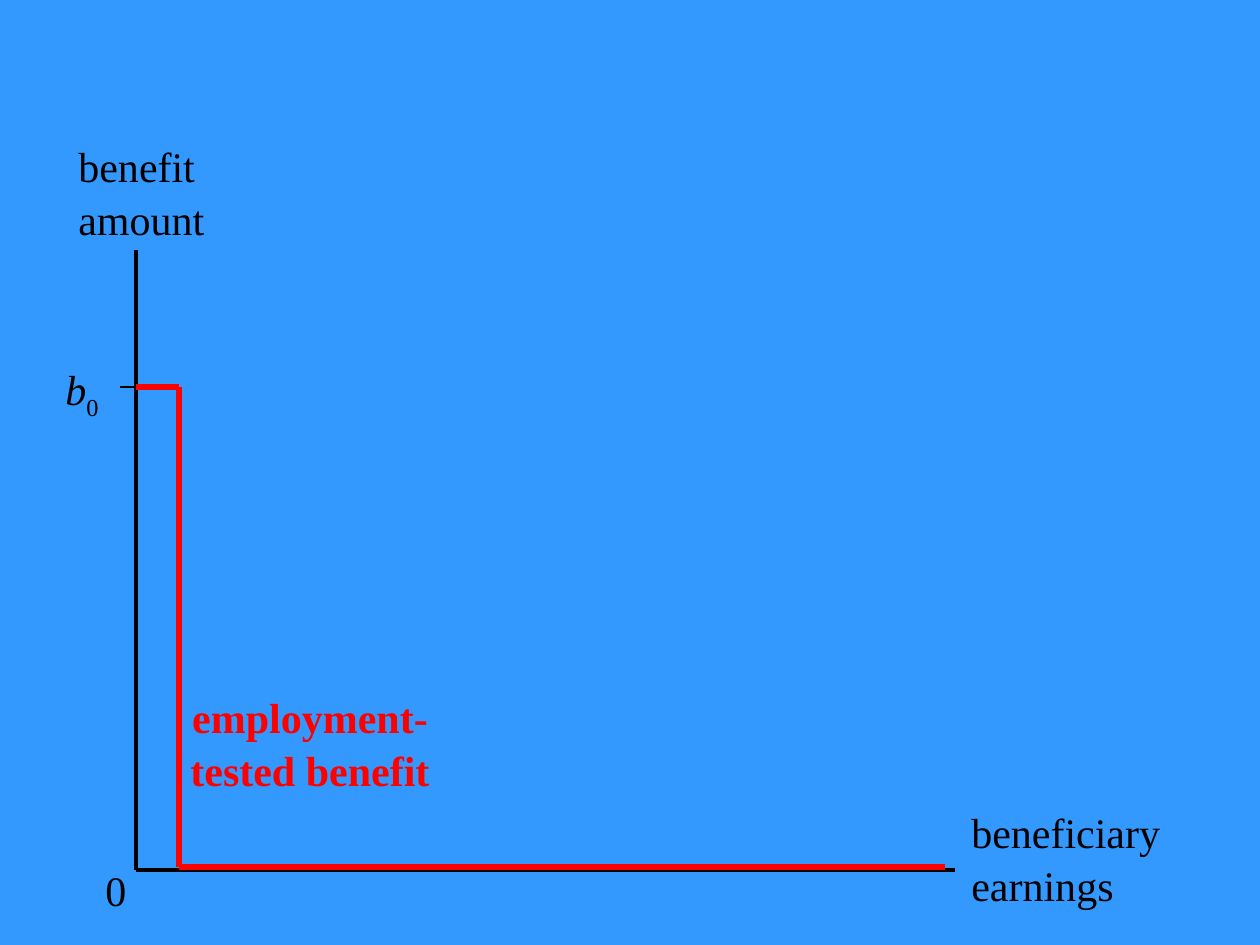
from lxml import etree
from pptx import Presentation
from pptx.dml.color import RGBColor
from pptx.enum.shapes import MSO_CONNECTOR
from pptx.enum.text import PP_ALIGN
from pptx.oxml.ns import qn
from pptx.util import Pt

PX = 914400 / 126
STRAIGHT = MSO_CONNECTOR.STRAIGHT
LEFT, CENTER = PP_ALIGN.LEFT, PP_ALIGN.CENTER
BLACK, RED, BLUE = "000000", "FF0000", "3399FF"


def px(value):
    return round(value * PX)


def color(value):
    return RGBColor.from_string(value)


presentation = Presentation()
presentation.slide_width = px(1260)
presentation.slide_height = px(945)
slide = presentation.slides.add_slide(presentation.slide_layouts[6])
slide.background.fill.solid()
slide.background.fill.fore_color.rgb = color(BLUE)

# Axes and tick first, then the benefit schedule over them
axis_x, axis_y = 136, 870
benefit_y, cutoff_x, zero_y = 387, 179, 867
lines = [
    (axis_x, 250, axis_x, axis_y, BLACK, 2),
    (955, axis_y, axis_x, axis_y, BLACK, 2),
    (152, benefit_y, 120, benefit_y, BLACK, 1.5),
    (cutoff_x, benefit_y, cutoff_x, zero_y, RED, 3),
    (945, zero_y, cutoff_x, zero_y, RED, 3),
    (cutoff_x, benefit_y, axis_x, benefit_y, RED, 3),
]
for x1, y1, x2, y2, line_color, width in lines:
    connector = slide.shapes.add_connector(STRAIGHT, px(x1), px(y1), px(x2), px(y2))
    connector.line.color.rgb = color(line_color)
    connector.line.width = Pt(width)
    etree.SubElement(connector._element.spPr, qn("a:effectLst"))

labels = [
    (66, 132, 158, 115, ["benefit amount"], BLACK, LEFT),
    (959, 798, 252, 115, ["beneficiary earnings"], BLACK, LEFT),
    (53, 355, 74, 63, ["b", "0"], BLACK, LEFT),
    (93, 856, 53, 64, ["0"], BLACK, LEFT),
    (168, 683, 284, 115, ["employment-tested benefit"], RED, CENTER),
]
for left, top, width, height, texts, text_color, alignment in labels:
    box = slide.shapes.add_textbox(px(left), px(top), px(width), px(height))
    box.text_frame.word_wrap = True
    paragraph = box.text_frame.paragraphs[0]
    paragraph.alignment = alignment
    paragraph.line_spacing = 1.05
    for text in texts:
        run = paragraph.add_run()
        run.text = text
        run.font.name = "Times New Roman"
        run.font.size = Pt(24)
        run.font.bold = text_color == RED
        run.font.color.rgb = color(text_color)
    if len(texts) == 2:
        symbol, subscript = paragraph.runs
        symbol.font.italic = True
        subscript.font._element.set("baseline", "-25000")

presentation.save("out.pptx")
